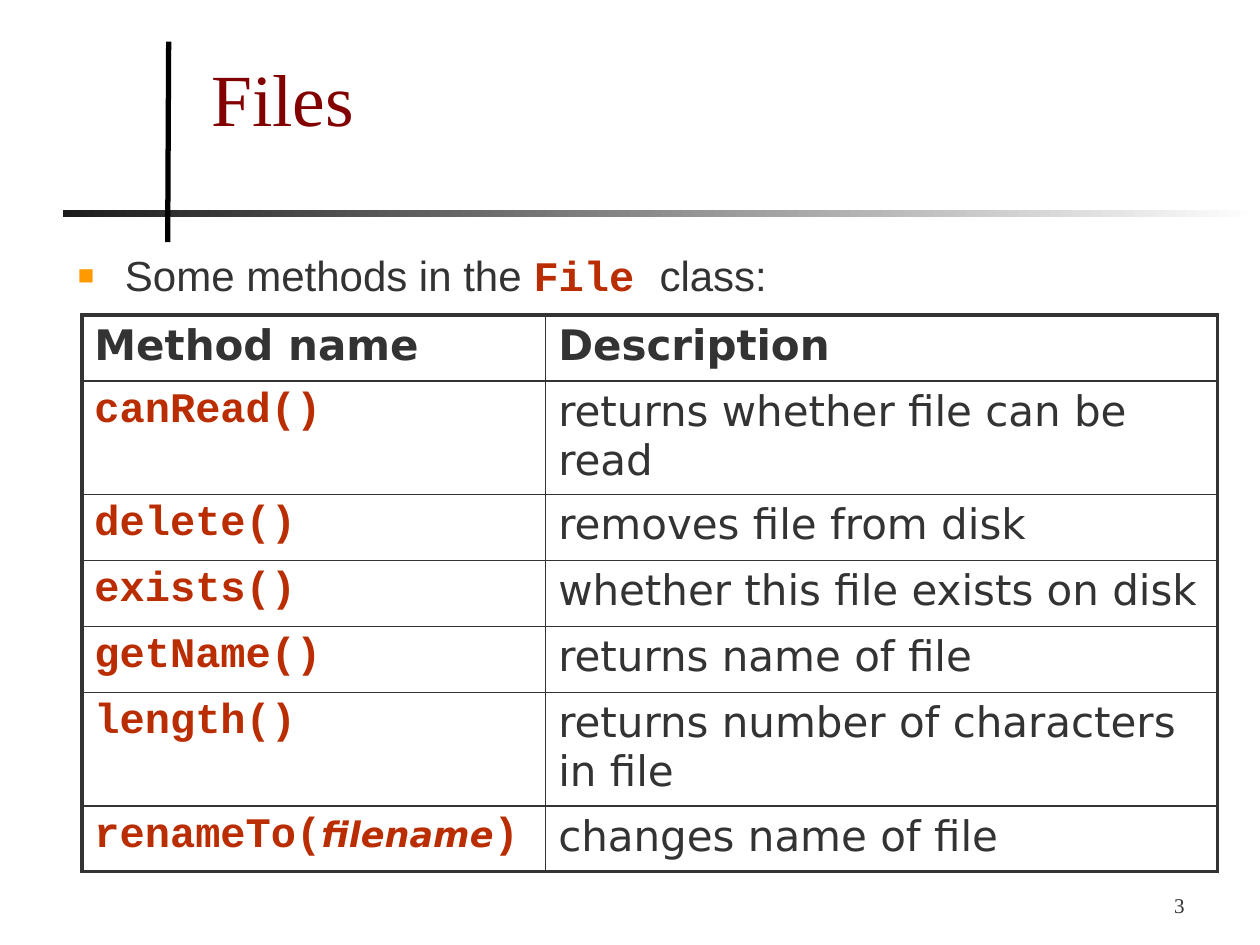
from dataclasses import dataclass

from lxml.etree import SubElement
from pptx import Presentation
from pptx.dml.color import RGBColor
from pptx.enum.shapes import MSO_CONNECTOR, MSO_SHAPE
from pptx.enum.text import MSO_ANCHOR, PP_ALIGN
from pptx.oxml.ns import qn
from pptx.util import Cm, Pt

COLORS = {
    "text": "333333",
    "code": "B92D00",
    "title": "820000",
    "bullet": "FF9900",
    "black": "000000",
    "bar_start": "1C1C1C",
    "bar_end": "FFFFFF",
}


@dataclass(frozen=True)
class Style:
    name: str
    size: float = 24
    color: str = "text"
    bold: bool = False
    italic: bool = False


@dataclass(frozen=True)
class Span:
    text: str
    style: Style


@dataclass(frozen=True)
class Box:
    left: float
    top: float
    width: float
    height: float
    anchor: MSO_ANCHOR = MSO_ANCHOR.TOP


TITLE = Style("Times New Roman", 42, "title")
BODY = Style("Arial")
NUMBER = Style("Times New Roman", 12)
HEADER = Style("DejaVu Sans", bold=True)
CELL = Style("DejaVu Sans")
CODE = Style("Courier New", color="code", bold=True)
ARGUMENT = Style("DejaVu Sans", 20, "code", True, True)

METHODS = [
    ([Span("canRead()", CODE)], "returns whether file can be read"),
    ([Span("delete()", CODE)], "removes file from disk"),
    ([Span("exists()", CODE)], "whether this file exists on disk"),
    ([Span("getName()", CODE)], "returns name of file"),
    ([Span("length()", CODE)], "returns number of characters in file"),
    (
        [Span("renameTo(", CODE), Span("filename", ARGUMENT), Span(")", CODE)],
        "changes name of file",
    ),
]
ROWS = [([Span("Method name", HEADER)], [Span("Description", HEADER)])] + [
    (method, [Span(description, CELL)]) for method, description in METHODS
]
COLUMN_WIDTHS = (9.35, 13.54)
ROW_HEIGHT, TALL_ROW_HEIGHT = 1.33, 2.23
TALL_ROWS = (1, 5)
OUTER_WIDTH, INNER_WIDTH = 2.25, 1


def rgb(color: str) -> RGBColor:
    return RGBColor.from_string(COLORS[color])


def write_spans(paragraph, spans: list[Span]) -> None:
    for span in spans:
        run = paragraph.add_run()
        run.text = span.text
        style = span.style
        values = {
            "name": style.name,
            "size": Pt(style.size),
            "bold": style.bold,
            "italic": style.italic,
        }
        for attribute, value in values.items():
            setattr(run.font, attribute, value)
        run.font.color.rgb = rgb(style.color)


def add_text(slide, box: Box, spans: list[Span], alignment=PP_ALIGN.LEFT):
    shape = slide.shapes.add_textbox(
        Cm(box.left), Cm(box.top), Cm(box.width), Cm(box.height)
    )
    frame = shape.text_frame
    frame.word_wrap = True
    frame.vertical_anchor = box.anchor
    paragraph = frame.paragraphs[0]
    paragraph.alignment = alignment
    write_spans(paragraph, spans)
    return paragraph


def add_bullet(paragraph) -> None:
    paragraph.line_spacing = 0.9
    properties = paragraph._p.get_or_add_pPr()
    properties.set("marL", str(Cm(0.95)))
    properties.set("indent", str(Cm(-0.95)))
    color = SubElement(properties, qn("a:buClr"))
    SubElement(color, qn("a:srgbClr"), val=COLORS["bullet"])
    SubElement(properties, qn("a:buSzPct"), val="65000")
    SubElement(properties, qn("a:buFont"), typeface="Arial")
    SubElement(properties, qn("a:buChar"), char="■")


def set_borders(cell, widths: dict[str, float]) -> None:
    properties = cell._tc.get_or_add_tcPr()
    for side, width in widths.items():
        line = SubElement(properties, qn(f"a:ln{side}"), w=str(Pt(width)))
        fill = SubElement(line, qn("a:solidFill"))
        SubElement(fill, qn("a:srgbClr"), val=COLORS["text"])


def add_decoration(slide) -> None:
    bar = slide.shapes.add_shape(
        MSO_SHAPE.RECTANGLE, Cm(1.27), Cm(4.24), Cm(24.13), Cm(0.13)
    )
    bar.shadow.inherit = False
    bar.line.fill.background()
    bar.fill.gradient()
    bar.fill.gradient_angle = 0
    for stop, color in zip(bar.fill.gradient_stops, ("bar_start", "bar_end")):
        stop.color.rgb = rgb(color)

    line = slide.shapes.add_connector(
        MSO_CONNECTOR.STRAIGHT, Cm(3.38), Cm(4.88), Cm(3.4), Cm(0.84)
    )
    line.line.color.rgb = rgb("black")
    line.line.width = Pt(3)
    SubElement(line._element.spPr, qn("a:effectLst"))


def add_method_table(slide) -> None:
    heights = [
        TALL_ROW_HEIGHT if index in TALL_ROWS else ROW_HEIGHT
        for index in range(len(ROWS))
    ]
    table = slide.shapes.add_table(
        len(ROWS),
        len(COLUMN_WIDTHS),
        Cm(1.65),
        Cm(6.35),
        Cm(sum(COLUMN_WIDTHS)),
        Cm(sum(heights)),
    ).table
    table.first_row = table.horz_banding = False
    for column, width in zip(table.columns, COLUMN_WIDTHS):
        column.width = Cm(width)
    for row, height in zip(table.rows, heights):
        row.height = Cm(height)

    last_row, last_column = len(ROWS) - 1, len(COLUMN_WIDTHS) - 1
    for row_index, row in enumerate(ROWS):
        for column_index, spans in enumerate(row):
            cell = table.cell(row_index, column_index)
            write_spans(cell.text_frame.paragraphs[0], spans)
            outer = {
                "L": column_index == 0,
                "R": column_index == last_column,
                "T": row_index == 0,
                "B": row_index == last_row,
            }
            set_borders(
                cell,
                {s: OUTER_WIDTH if o else INNER_WIDTH for s, o in outer.items()},
            )
            cell.fill.background()


def main() -> None:
    presentation = Presentation()
    presentation.slide_width, presentation.slide_height = Cm(25.4), Cm(19.05)
    slide = presentation.slides.add_slide(presentation.slide_layouts[6])
    add_decoration(slide)
    add_text(slide, Box(4.01, 0.94, 20.12, 3), [Span("Files", TITLE)])
    body = [
        Span("Some methods in the ", BODY),
        Span("File ", CODE),
        Span("class:", BODY),
    ]
    add_bullet(add_text(slide, Box(1.32, 5.02, 24.08, 1.3), body))
    add_method_table(slide)
    number_box = Box(18.21, 17.35, 5.92, 1.27, MSO_ANCHOR.BOTTOM)
    add_text(slide, number_box, [Span("3", NUMBER)], PP_ALIGN.RIGHT)
    presentation.save("out.pptx")


if __name__ == "__main__":
    main()
